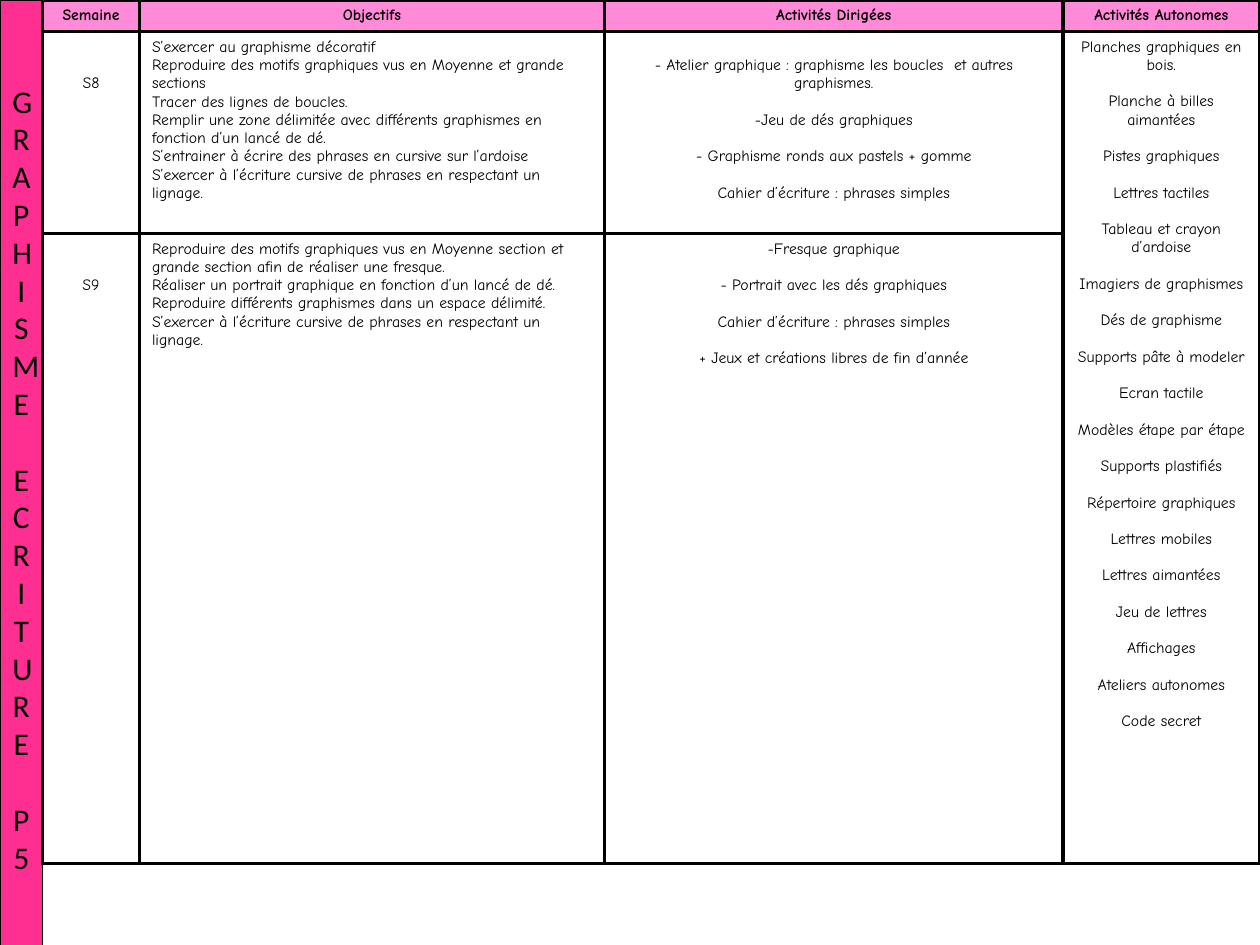
"""Build the weekly plan for graphic work and handwriting, period 5."""
from lxml.etree import SubElement
from pptx import Presentation
from pptx.dml.color import RGBColor
from pptx.enum.shapes import MSO_SHAPE as SHAPE
from pptx.enum.text import MSO_ANCHOR as ANCHOR, PP_ALIGN as ALIGN
from pptx.oxml.ns import qn
from pptx.util import Pt

BLACK = RGBColor(0x00, 0x00, 0x00)
WHITE = RGBColor(0xFF, 0xFF, 0xFF)
PINK = RGBColor(0xFF, 0x2F, 0x92)
LIGHT_PINK = RGBColor(0xFF, 0x8A, 0xD8)

SIDE_WORDS = ["GRAPHISME", "ECRITURE", "P5"]
SIDE_LINE = 21.6
SIDE_WIDTH = 24.3
LINE = 10.4
INSET = 3.6
COLUMNS = [55.4, 265.7, 262, 112.4]
ROWS = [18.1, 115.4, 360]

HEADERS = ["Semaine", "Objectifs", "Activités Dirigées", "Activités Autonomes"]
WEEKS = [
    {
        "name": "S8",
        "goals": [
            "S’exercer au graphisme décoratif",
            "Reproduire des motifs graphiques vus en Moyenne et grande sections",
            "Tracer des lignes de boucles.",
            "Remplir une zone délimitée avec différents graphismes en fonction d’un lancé de dé.",
            "S’entrainer à écrire des phrases en cursive sur l’ardoise",
            "S’exercer à l’écriture cursive de phrases en respectant un lignage.",
        ],
        "guided": [
            "- Atelier graphique : graphisme les boucles  et autres graphismes.",
            "-Jeu de dés graphiques",
            "- Graphisme ronds aux pastels + gomme",
            "Cahier d’écriture : phrases simples",
        ],
        "guided_skip": 1,
    },
    {
        "name": "S9",
        "goals": [
            "Reproduire des motifs graphiques vus en Moyenne section et grande section afin de réaliser une fresque.",
            "Réaliser un portrait graphique en fonction d’un lancé de dé.",
            "Reproduire différents graphismes dans un espace délimité.",
            "S’exercer à l’écriture cursive de phrases en respectant un lignage.",
        ],
        "guided": [
            "-Fresque graphique",
            "- Portrait avec les dés graphiques",
            "Cahier d’écriture : phrases simples",
            "+ Jeux et créations libres de fin d’année",
        ],
        "guided_skip": 0,
    },
]
AUTONOMOUS = [
    "Planches graphiques en bois.", "Planche à billes aimantées",
    "Pistes graphiques", "Lettres tactiles", "Tableau et crayon d’ardoise",
    "Imagiers de graphismes", "Dés de graphisme", "Supports pâte à modeler",
    "Ecran tactile", "Modèles étape par étape", "Supports plastifiés",
    "Répertoire graphiques", "Lettres mobiles", "Lettres aimantées",
    "Jeu de lettres", "Affichages", "Ateliers autonomes", "Code secret",
]

BODY_FONT = {"name": "Comic Neue", "size": Pt(9), "bold": False}
HEAD_FONT = {**BODY_FONT, "bold": True}
SIDE_FONT = {"name": "Calibri", "size": Pt(18)}


def set_attrs(target, values):
    for name, value in values.items():
        setattr(target, name, value)


def add_line(tf, index, text, font, layout):
    p = tf.paragraphs[0] if index == 0 else tf.add_paragraph()
    set_attrs(p, layout)
    r = p.add_run()
    r.text = text
    set_attrs(r.font, font)
    r.font.color.rgb = BLACK


def add_sidebar(slide):
    sp = slide.shapes.add_shape(SHAPE.RECTANGLE, 0, 0, Pt(SIDE_WIDTH), Pt(552))
    sp.shadow.inherit = False
    sp.fill.solid()
    sp.fill.fore_color.rgb = PINK
    sp.line.color.rgb = BLACK
    sp.line.width = Pt(0.75)
    tf = sp.text_frame
    set_attrs(tf, {"word_wrap": True, "vertical_anchor": ANCHOR.TOP, "margin_top": Pt(46.6)})
    letters = [(c, w > 0 and i == 0) for w, word in enumerate(SIDE_WORDS) for i, c in enumerate(word)]
    for index, (letter, starts_word) in enumerate(letters):
        layout = {"alignment": ALIGN.CENTER, "line_spacing": Pt(SIDE_LINE),
                  "space_before": Pt(SIDE_LINE if starts_word else 0)}
        add_line(tf, index, letter, SIDE_FONT, layout)


def add_borders(cell):
    tc_pr = cell._tc.get_or_add_tcPr()
    for index, side in enumerate(("lnL", "lnR", "lnT", "lnB")):
        ln = tc_pr.makeelement(qn(f"a:{side}"), {"w": str(Pt(2.25))})
        fill = SubElement(ln, qn("a:solidFill"))
        SubElement(fill, qn("a:srgbClr"), val=str(BLACK))
        tc_pr.insert(index, ln)


def fill_cell(cell, lines, align=ALIGN.CENTER, gap=LINE, skip=0, font=BODY_FONT):
    cell.margin_top = Pt(INSET + skip * LINE)
    for index, text in enumerate(lines):
        layout = {"alignment": align, "space_before": Pt(gap if index else 0)}
        add_line(cell.text_frame, index, text, font, layout)


def add_plan(slide):
    frame = slide.shapes.add_table(len(ROWS), len(COLUMNS), Pt(SIDE_WIDTH), 0,
                                   Pt(sum(COLUMNS)), Pt(sum(ROWS)))
    table = frame.table
    set_attrs(table, {"first_row": False, "horz_banding": False})
    for column, width in zip(table.columns, COLUMNS):
        column.width = Pt(width)
    for i, (row, height) in enumerate(zip(table.rows, ROWS)):
        row.height = Pt(height)
        for cell in row.cells:
            cell.fill.solid()
            cell.fill.fore_color.rgb = WHITE if i else LIGHT_PINK
            add_borders(cell)
    for j, header in enumerate(HEADERS):
        fill_cell(table.cell(0, j), [header], font=HEAD_FONT)
    for i, week in enumerate(WEEKS, 1):
        fill_cell(table.cell(i, 0), [week["name"]], skip=2)
        fill_cell(table.cell(i, 1), week["goals"], align=ALIGN.LEFT, gap=0)
        fill_cell(table.cell(i, 2), week["guided"], skip=week["guided_skip"])
    table.cell(1, 3).merge(table.cell(len(WEEKS), 3))
    fill_cell(table.cell(1, 3), AUTONOMOUS)


def main():
    prs = Presentation()
    set_attrs(prs, {"slide_width": Pt(720), "slide_height": Pt(540)})
    slide = prs.slides.add_slide(prs.slide_layouts[6])
    add_sidebar(slide)
    add_plan(slide)
    prs.save("out.pptx")


if __name__ == "__main__":
    main()
